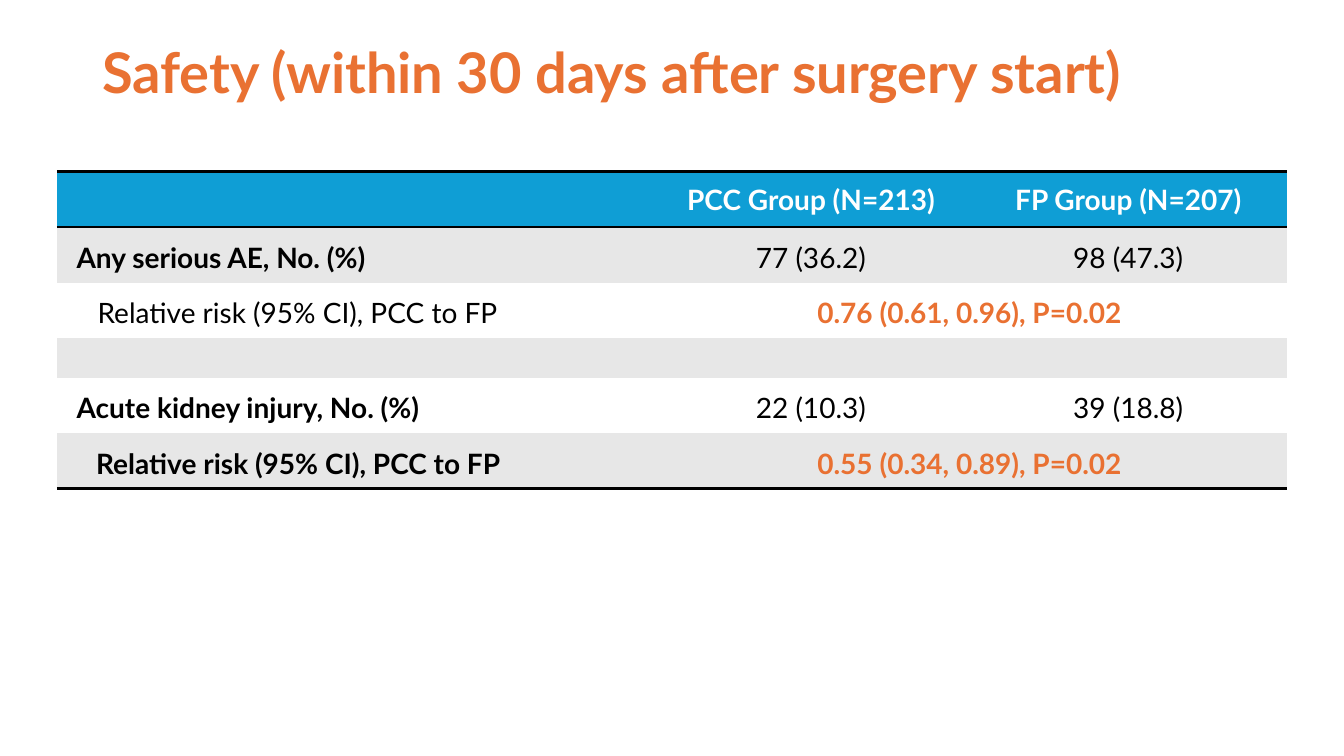
from pptx import Presentation
from pptx.dml.color import RGBColor
from pptx.enum.text import MSO_ANCHOR, PP_ALIGN
from pptx.oxml.ns import qn
from pptx.util import Pt
from lxml.etree import SubElement

COLORS = {
    "accent": "E97132",
    "header": "0F9ED5",
    "band": "E7E7E7",
    "white": "FFFFFF",
    "black": "000000",
}
FONT = "Lato"
COL_WIDTHS = [425.2, 226.7, 226.7]
ROW_HEIGHT, GAP_HEIGHT = 39.6, 28.4
HEADINGS = ["", "PCC Group (N=213)", "FP Group (N=207)"]
RELATIVE_RISK = "Relative risk (95% CI), PCC to FP"
# Label, label indent, label bold, values; a single value spans both groups.
BODY = [
    ("Any serious AE, No. (%)", 9, True, ["77 (36.2)", "98 (47.3)"]),
    (RELATIVE_RISK, 24, False, ["0.76 (0.61, 0.96), P=0.02"]),
    None,
    ("Acute kidney injury, No. (%)", 9, True, ["22 (10.3)", "39 (18.8)"]),
    (RELATIVE_RISK, 23, True, ["0.55 (0.34, 0.89), P=0.02"]),
]


def rgb(name):
    return RGBColor.from_string(COLORS[name])


def add_run(p, text, size, color, bold):
    r = p.add_run()
    r.text = text
    r.font.name = FONT
    r.font.size = Pt(size)
    r.font.bold = bold
    r.font.color.rgb = rgb(color)


def add_title(s, text):
    tf = s.shapes.add_textbox(Pt(66), Pt(28.8), Pt(828), Pt(104.4)).text_frame
    tf.word_wrap = True
    p = tf.paragraphs[0]
    p.line_spacing = 0.9
    add_run(p, text, 40, "accent", True)


def set_borders(cell, ruled):
    """Draw a 2 pt black rule on the sides in ruled and nothing on the others."""
    tc_pr = cell._tc.get_or_add_tcPr()
    for side in "LRTB":
        ln = SubElement(tc_pr, qn(f"a:ln{side}"))
        if side in ruled:
            ln.set("w", str(Pt(2)))
            fill = SubElement(ln, qn("a:solidFill"))
            SubElement(fill, qn("a:srgbClr")).set("val", COLORS["black"])
        else:
            SubElement(ln, qn("a:noFill"))


def style_row(table, row, fill, ruled, height):
    table.rows[row].height = Pt(height)
    for cell in table.rows[row].cells:
        set_borders(cell, ruled)
        cell.fill.solid()
        cell.fill.fore_color.rgb = rgb(fill)
        cell.vertical_anchor = MSO_ANCHOR.MIDDLE
        cell.margin_top = cell.margin_bottom = 0


def write_cell(cell, text, color, bold, align=PP_ALIGN.CENTER):
    p = cell.text_frame.paragraphs[0]
    p.alignment = align
    add_run(p, text, 20, color, bold)
    return p


def write_body_cell(cell, text, color, bold, align=PP_ALIGN.CENTER, indent=0):
    cell.margin_left, cell.margin_right = Pt(5 + indent), Pt(5)
    p = write_cell(cell, text, color, bold, align)
    p.line_spacing = 1.15
    p.space_after = Pt(10)


def fill_body_row(table, row, content):
    label, indent, bold, values = content
    write_body_cell(table.cell(row, 0), label, "black", bold,
                    PP_ALIGN.LEFT, indent)
    is_risk = len(values) == 1
    if is_risk:
        table.cell(row, 1).merge(table.cell(row, 2))
    for col, value in enumerate(values, start=1):
        write_body_cell(table.cell(row, col), value,
                        "accent" if is_risk else "black", is_risk)


def add_safety_table(s):
    height = ROW_HEIGHT * len(BODY) + GAP_HEIGHT
    table = s.shapes.add_table(len(BODY) + 1, len(COL_WIDTHS), Pt(40.7),
                               Pt(122.6), Pt(sum(COL_WIDTHS)), Pt(height)).table
    table.horz_banding = False
    for column, width in zip(table.columns, COL_WIDTHS):
        column.width = Pt(width)

    style_row(table, 0, "header", "TB", ROW_HEIGHT)
    for col, heading in enumerate(HEADINGS):
        if heading:
            write_cell(table.cell(0, col), heading, "white", True)

    for row, content in enumerate(BODY, start=1):
        ruled = {1: "T", len(BODY): "B"}.get(row, "")
        style_row(table, row, "band" if row % 2 else "white", ruled,
                  ROW_HEIGHT if content else GAP_HEIGHT)
        if content:
            fill_body_row(table, row, content)


def main():
    prs = Presentation()
    prs.slide_width, prs.slide_height = Pt(960), Pt(540)
    s = prs.slides.add_slide(prs.slide_layouts[6])
    add_title(s, "Safety (within 30 days after surgery start)")
    add_safety_table(s)
    prs.save("out.pptx")


if __name__ == "__main__":
    main()
